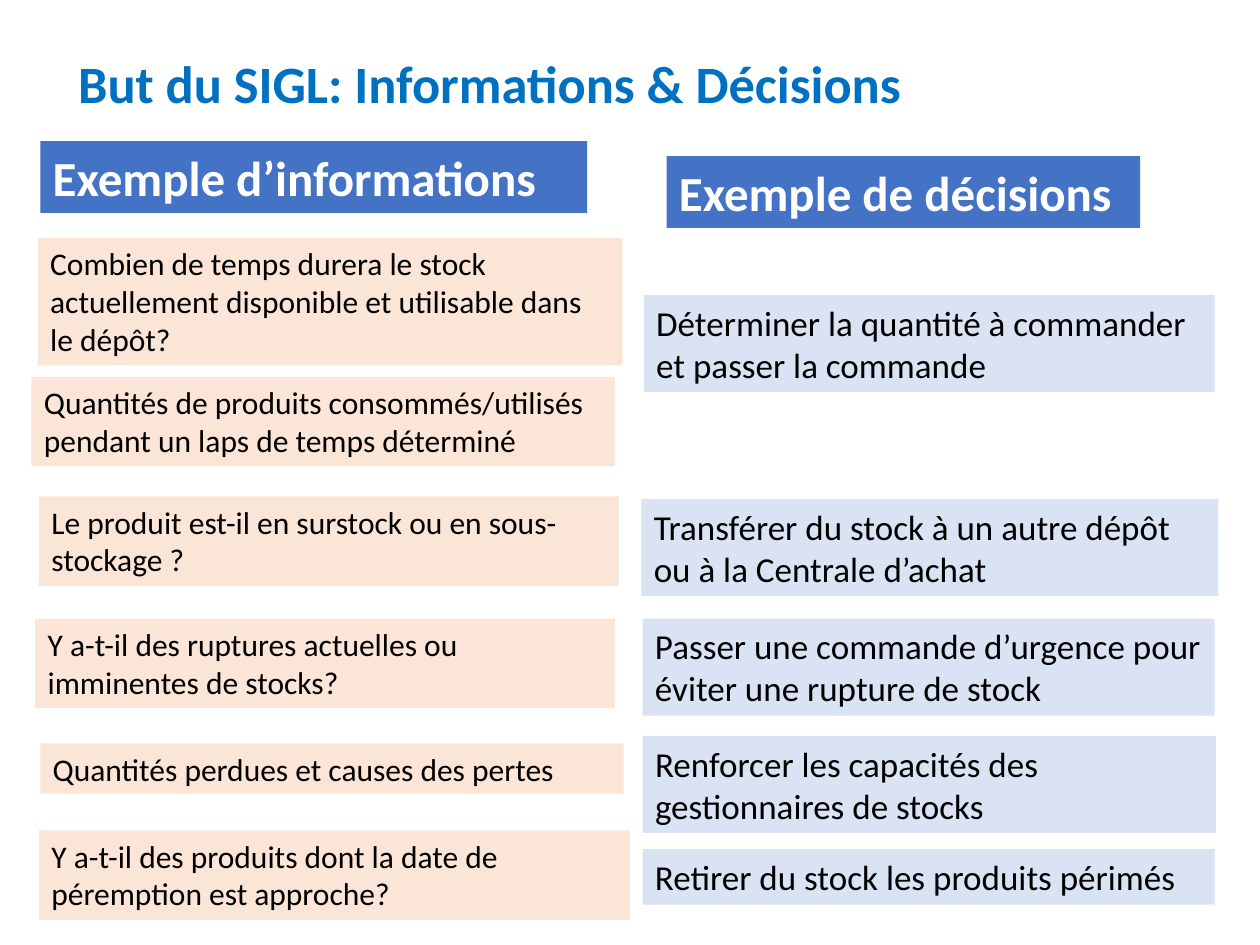
from dataclasses import dataclass

from pptx import Presentation
from pptx.dml.color import RGBColor
from pptx.enum.shapes import MSO_SHAPE
from pptx.enum.text import MSO_ANCHOR, MSO_AUTO_SIZE, PP_ALIGN
from pptx.util import Inches, Pt

RECTANGLE = MSO_SHAPE.RECTANGLE
LEFT = PP_ALIGN.LEFT
TOP, MIDDLE = MSO_ANCHOR.TOP, MSO_ANCHOR.MIDDLE
NO_FIT, GROW = MSO_AUTO_SIZE.NONE, MSO_AUTO_SIZE.SHAPE_TO_FIT_TEXT


@dataclass(frozen=True)
class Style:
    size: int
    color: str
    bold: bool = False
    fill: str = ""


@dataclass(frozen=True)
class Theme:
    font: str = "Calibri"
    title: Style = Style(30, "0070C0", True)
    heading: Style = Style(28, "FFFFFF", True, "4472C4")
    information: Style = Style(18, "000000", False, "FBE5D6")
    decision: Style = Style(20, "000000", False, "DAE3F3")


@dataclass(frozen=True)
class Box:
    text: str
    left: float
    top: float
    width: float
    height: float
    wrap: bool = True


THEME = Theme()

TITLE = Box("But du SIGL: Informations & Décisions", 0.52, 0.34, 8.62, 0.69)

HEADINGS = [
    Box("Exemple d’informations", 0.32, 1.12, 4.34, 0.57),
    Box("Exemple de décisions", 5.29, 1.24, 3.76, 0.57, wrap=False),
]

INFORMATIONS = [
    Box("Combien de temps durera le stock actuellement disponible et utilisable "
        "dans le dépôt?", 0.3, 1.89, 4.64, 1.01),
    Box("Quantités de produits consommés/utilisés pendant un laps de temps "
        "déterminé", 0.25, 2.99, 4.63, 0.71),
    Box("Le produit est-il en surstock ou en sous-stockage ?", 0.31, 3.94, 4.6, 0.71),
    Box("Y a-t-il des ruptures actuelles ou imminentes de stocks?",
        0.28, 4.91, 4.6, 0.71),
    Box("Quantités perdues et causes des pertes", 0.32, 5.9, 4.63, 0.4),
    Box("Y a-t-il des produits dont la date de péremption est approche?",
        0.31, 6.59, 4.69, 0.71),
]

DECISIONS = [
    Box("Déterminer la quantité à commander et passer la commande",
        5.11, 2.34, 4.53, 0.77),
    Box("Transférer du stock à un autre dépôt ou à la Centrale d’achat",
        5.09, 3.96, 4.58, 0.77),
    Box("Passer une commande d’urgence pour éviter une rupture de stock",
        5.1, 4.91, 4.54, 0.77),
    Box("Renforcer les capacités des gestionnaires de stocks", 5.1, 5.84, 4.55, 0.77),
    Box("Retirer du stock les produits périmés", 5.1, 6.74, 4.54, 0.44),
]


def set_attributes(target, values: dict) -> None:
    for name, value in values.items():
        setattr(target, name, value)


def write_text(shape, box: Box, style: Style, frame_format: dict) -> None:
    frame = shape.text_frame
    frame.text = box.text
    set_attributes(frame, {"word_wrap": box.wrap, **frame_format})
    paragraph = frame.paragraphs[0]
    paragraph.alignment = LEFT
    font = paragraph.runs[0].font
    set_attributes(font, {"name": THEME.font, "size": Pt(style.size), "bold": style.bold})
    font.color.rgb = RGBColor.from_string(style.color)


def place_title(slide, box: Box) -> None:
    title = slide.shapes.title
    set_attributes(title, {side: Inches(getattr(box, side))
                           for side in ("left", "top", "width", "height")})
    write_text(title, box, THEME.title, {"vertical_anchor": MIDDLE, "auto_size": NO_FIT})
    title.text_frame.paragraphs[0].line_spacing = 0.9


def draw_box(slide, box: Box, style: Style) -> None:
    panel = slide.shapes.add_shape(RECTANGLE, Inches(box.left), Inches(box.top),
                                   Inches(box.width), Inches(box.height))
    panel.shadow.inherit = False
    panel.fill.solid()
    panel.fill.fore_color.rgb = RGBColor.from_string(style.fill)
    panel.line.fill.background()
    write_text(panel, box, style, {"vertical_anchor": TOP, "auto_size": GROW})


def main() -> None:
    deck = Presentation()
    deck.slide_width, deck.slide_height = Inches(10), Inches(7.5)
    slide = deck.slides.add_slide(deck.slide_layouts.get_by_name("Title Only"))

    # Title
    place_title(slide, TITLE)

    # Column headings, information on the left, decisions on the right
    for boxes, style in ((HEADINGS, THEME.heading),
                         (INFORMATIONS, THEME.information),
                         (DECISIONS, THEME.decision)):
        for box in boxes:
            draw_box(slide, box, style)

    deck.save("out.pptx")


if __name__ == "__main__":
    main()
